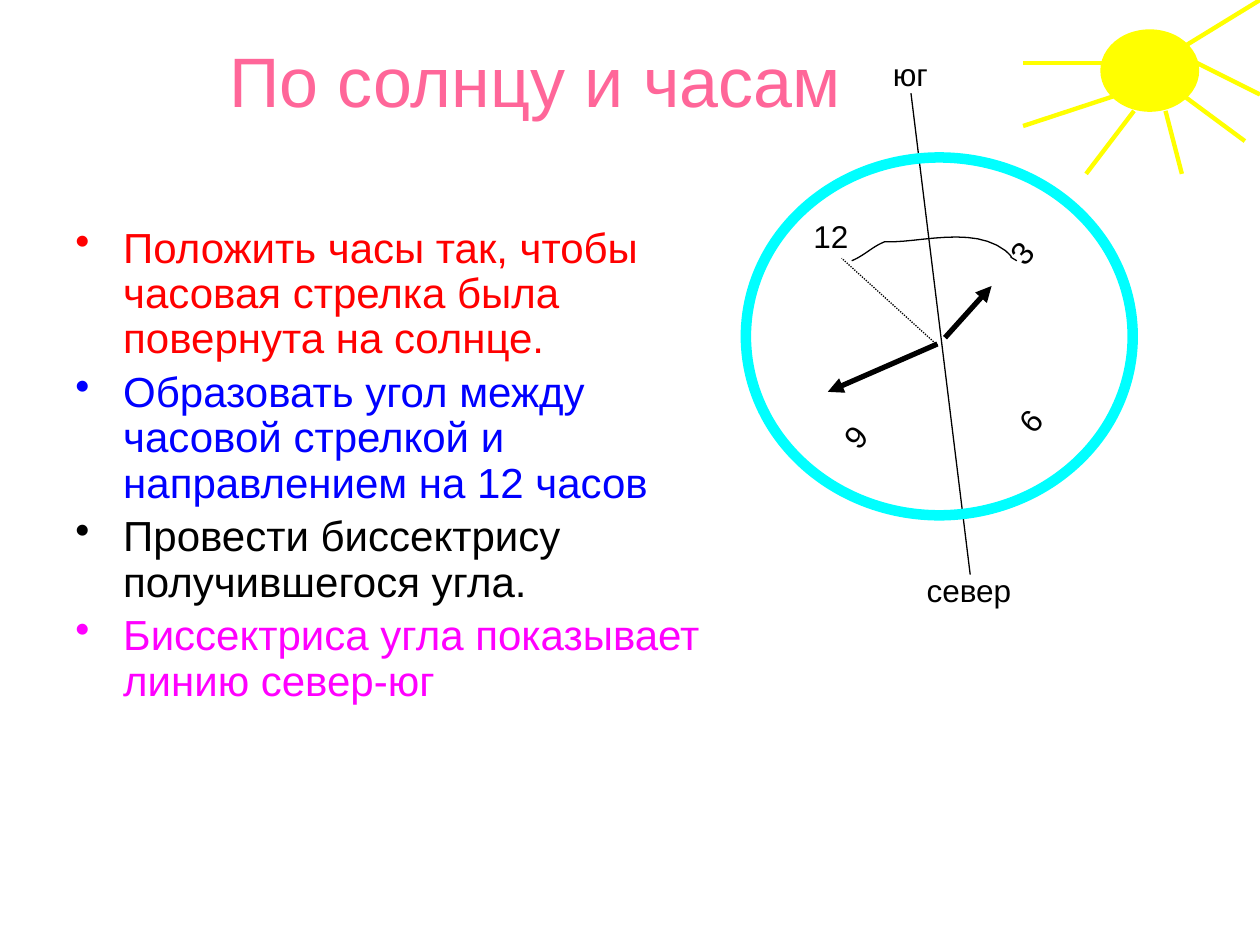
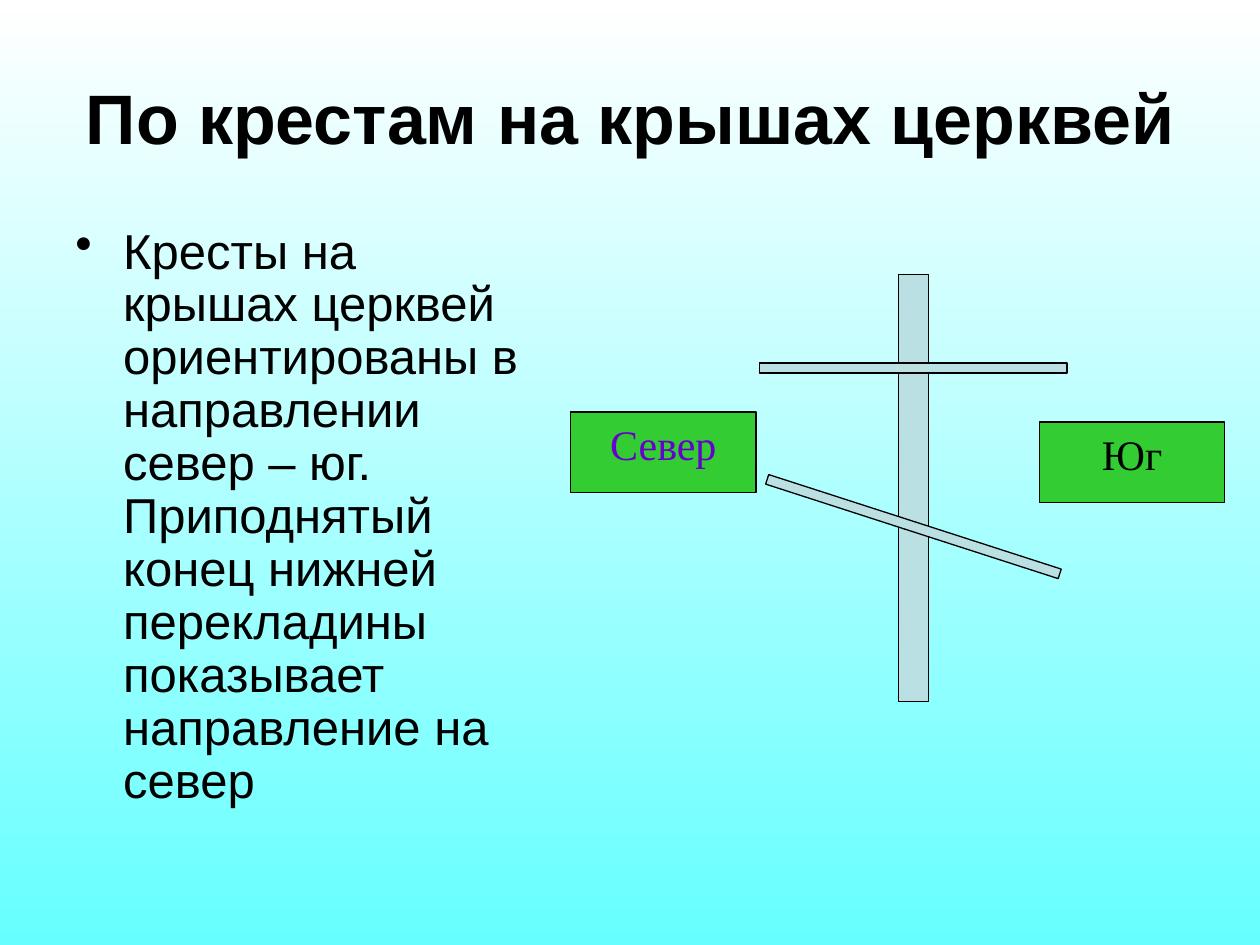
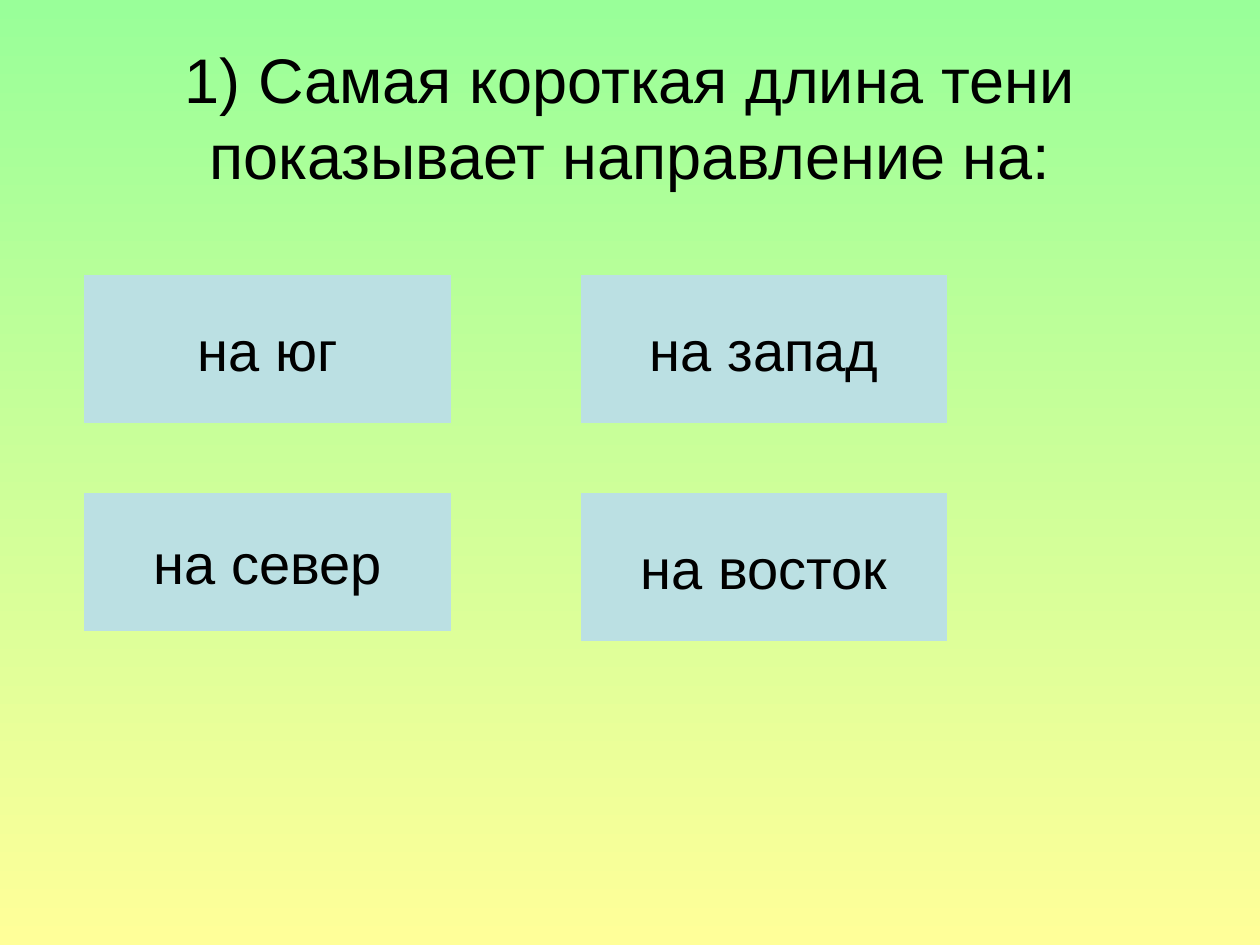
from lxml import etree
from pptx import Presentation
from pptx import util as u
from pptx.dml import color
from pptx.enum import dml, shapes, text
from pptx.oxml import ns

C = {name: color.RGBColor.from_string(code) for name, code in {
    "black": "000000", "white": "FFFFFF", "red": "FF0000", "blue": "0000FF",
    "magenta": "FF00FF", "pink": "FF6699", "sun": "FFFF00", "dial": "00FFFF",
    "pale": "BBE0E3", "sign": "33CC33", "violet": "6600CC",
    "sky": "66FFFF", "mint": "99FF99", "cream": "FFFF99"}.items()}
MID, TOP = text.MSO_ANCHOR.MIDDLE, text.MSO_ANCHOR.TOP
SHAPE = shapes.MSO_SHAPE


def add_box(parent, at, lines=(), size=18, kind=None, fill=None, line=None, width=0.75,
            font="Arial", bold=False, anchor=TOP, wrap=True, rotation=0, bullets=False):
    """Add a text box, or a preset shape if kind is given; lines are (words, colour) pairs."""
    at = [u.Inches(v) for v in at]
    if kind is None:
        sp = parent.add_textbox(*at)
    else:
        sp = parent.add_shape(kind, *at)
        sp.shadow.inherit = False
        if fill:
            sp.fill.solid()
            sp.fill.fore_color.rgb = C[fill]
        else:
            sp.fill.background()
        if line:
            sp.line.color.rgb = C[line]
            sp.line.width = u.Pt(width)
        else:
            sp.line.fill.background()
    sp.rotation = rotation
    tf = sp.text_frame
    tf.word_wrap = wrap
    tf.vertical_anchor = anchor
    for i, (words, ink) in enumerate(lines):
        p = tf.add_paragraph() if i else tf.paragraphs[0]
        p.text = words
        p.font.size, p.font.name, p.font.bold = u.Pt(size), font, bold
        p.font.color.rgb = C[ink]
        p.alignment = text.PP_ALIGN.LEFT if bullets else text.PP_ALIGN.CENTER
        if bullets:
            p.line_spacing = 0.9
            p.space_before = u.Pt(size * 0.2)
            pPr = p._p.get_or_add_pPr()
            pPr.set("marL", str(u.Inches(0.38)))
            pPr.set("indent", str(u.Inches(-0.38)))
            bu = etree.Element(ns.qn("a:buChar"), char="•")
            pPr.insert_element_before(bu, "a:tabLst", "a:defRPr", "a:extLst")
    return sp


def add_line(parent, start, end, ink="black", width=0.75, arrow=False, dash=None):
    cn = parent.add_connector(shapes.MSO_CONNECTOR.STRAIGHT,
                              *[u.Inches(v) for v in (*start, *end)])
    cn.line.color.rgb = C[ink]
    cn.line.width = u.Pt(width)
    if dash:
        cn.line.dash_style = dash
    if arrow:
        etree.SubElement(cn.line._get_or_add_ln(), ns.qn("a:tailEnd"), type="triangle")
    etree.SubElement(cn._element.spPr, ns.qn("a:effectLst"))


prs = Presentation()
prs.slide_width, prs.slide_height = u.Inches(10), u.Inches(7.5)

# Backgrounds and titles: gradient stops, title, colour, size, width, bold
slides = []
for stops, title, ink, size, width, bold in [
    (None, "По солнцу и часам", "pink", 40, 7.49, False),
    (("white", "sky"), "По крестам на крышах церквей", "black", 40, 9, True),
    (("mint", "cream"), "1) Самая короткая длина тени показывает направление на:",
     "black", 36, 9, False),
]:
    s = prs.slides.add_slide(prs.slide_layouts[6])
    bg = s.background.fill
    if stops:
        bg.gradient()
        bg.gradient_angle = 270
        for stop, name, position in zip(bg.gradient_stops, stops, (0, 1)):
            stop.color.rgb = C[name]
            stop.position = position
    else:
        bg.solid()
        bg.fore_color.rgb = C["white"]
    heading = add_box(s.shapes, (0.5, 0.3, width, 1.25), [(title, ink)], size,
                      bold=bold, anchor=MID if stops else TOP)
    if not stops:
        heading.text_frame.margin_top = 0
    slides.append(s)
watch, church, quiz = slides

# Slide 1: steps
add_box(watch.shapes, (0.5, 1.75, 5.37, 4.95), [
    ("Положить часы так, чтобы часовая стрелка была повернута на солнце.", "red"),
    ("Образовать угол между часовой стрелкой и направлением на 12 часов", "blue"),
    ("Провести биссектрису получившегося угла.", "black"),
    ("Биссектриса угла показывает линию север-юг", "magenta"),
], 24, bullets=True)

# Slide 1: sun and its rays
sun = watch.shapes.add_group_shape().shapes
add_box(sun, (8.75, 0.25, 0.75, 0.62), kind=SHAPE.OVAL, fill="sun", line="sun", width=2.5)
for start, end in [
    ((8.12, 0.5), (8.88, 0.5)), ((9.5, 0.5), (10, 0.75)), ((9.38, 0.38), (10, 0)),
    ((8.12, 1), (8.88, 0.75)), ((8.62, 1.38), (9, 0.88)),
    ((9.38, 1.38), (9.25, 0.88)), ((9.38, 0.75), (9.88, 1.12)),
]:
    add_line(sun, start, end, "sun", 2.5)

# Slide 1: clock numbers, hands, north-south line and dial
clock = watch.shapes.add_group_shape().shapes
for hour, x, y, turn in [("12", 6.16, 1.64, 0), ("6", 7.74, 3.1, 312.2),
                         ("9", 6.35, 3.23, 312.2), ("3", 7.67, 1.77, 312.2)]:
    add_box(clock, (x, y, 0.87, 0.47), [(hour, "black")], anchor=MID, wrap=False,
            rotation=turn)
add_line(clock, (7.5, 2.68), (7.87, 2.27), width=3, arrow=True)
add_line(clock, (7.44, 2.73), (6.57, 3.11), width=3, arrow=True)
add_line(clock, (7.44, 2.74), (6.68, 2.05), dash=dml.MSO_LINE.ROUND_DOT)
add_line(clock, (7.23, 0.74), (7.7, 4.56))
add_box(clock, (5.92, 1.25, 3.07, 2.84), kind=SHAPE.OVAL, line="dial", width=6)

# Slide 1: angle arc, Bezier curves sampled in short steps
knots = [(6.76, 2.07), (6.86, 2.03), (6.92, 1.96), (7.02, 1.92), (7.3, 1.93),
         (7.72, 1.79), (7.98, 1.99), (8.08, 2.08), (7.97, 2.01), (8.07, 2.07)]
steps = 12
points = []
for i in range(0, len(knots) - 1, 3):
    for t in (k / steps for k in range(1, steps + 1)):
        weights = ((1 - t) ** 3, 3 * t * (1 - t) ** 2, 3 * t * t * (1 - t), t ** 3)
        points.append([u.Inches(sum(w * knot[axis] for w, knot in zip(weights, knots[i:i + 4])))
                       for axis in (0, 1)])
builder = clock.build_freeform(*[u.Inches(v) for v in knots[0]])
builder.add_line_segments(points, close=False)
arc = builder.convert_to_shape()
arc.shadow.inherit = False
arc.fill.background()
arc.line.color.rgb = C["black"]
arc.line.width = u.Pt(0.75)

# Slide 1: compass labels
add_box(clock, (6.79, 0.39, 0.87, 0.4), [("юг", "black")])
add_box(clock, (7.18, 4.48, 1.02, 0.4), [("север", "black")])

# Slide 2: explanation
add_box(church.shapes, (0.5, 1.75, 3.87, 4.95), [
    ("Кресты на крышах церквей ориентированы в направлении север – юг. Приподнятый "
     "конец нижней перекладины показывает направление на север", "black"),
], 28, bullets=True)

# Slide 2: cross and direction signs
for at, turn in [((7.13, 2.18, 0.24, 3.39), 0), ((6.03, 4.14, 2.44, 0.08), 17.9),
                 ((6.03, 2.88, 2.44, 0.08), 0)]:
    add_box(church.shapes, at, kind=SHAPE.RECTANGLE, fill="pale", line="black", rotation=turn)
for x, y, side, ink in [(8.25, 3.35, "Юг", "black"), (4.53, 3.27, "Север", "violet")]:
    add_box(church.shapes, (x, y, 1.47, 0.64), [(side, ink)], 24, SHAPE.RECTANGLE,
            "sign", "black", font="Times New Roman")

# Slide 3: answer buttons
for x, y, height, answer in [
    (0.67, 2.18, 1.18, "на юг"), (0.67, 3.91, 1.1, "на север"),
    (4.61, 2.18, 1.18, "на запад"), (4.61, 3.91, 1.18, "на восток"),
]:
    add_box(quiz.shapes, (x, y, 2.91, height), [(answer, "black")], 32,
            SHAPE.ACTION_BUTTON_CUSTOM, "pale", anchor=MID, wrap=False)

prs.save("out.pptx")
